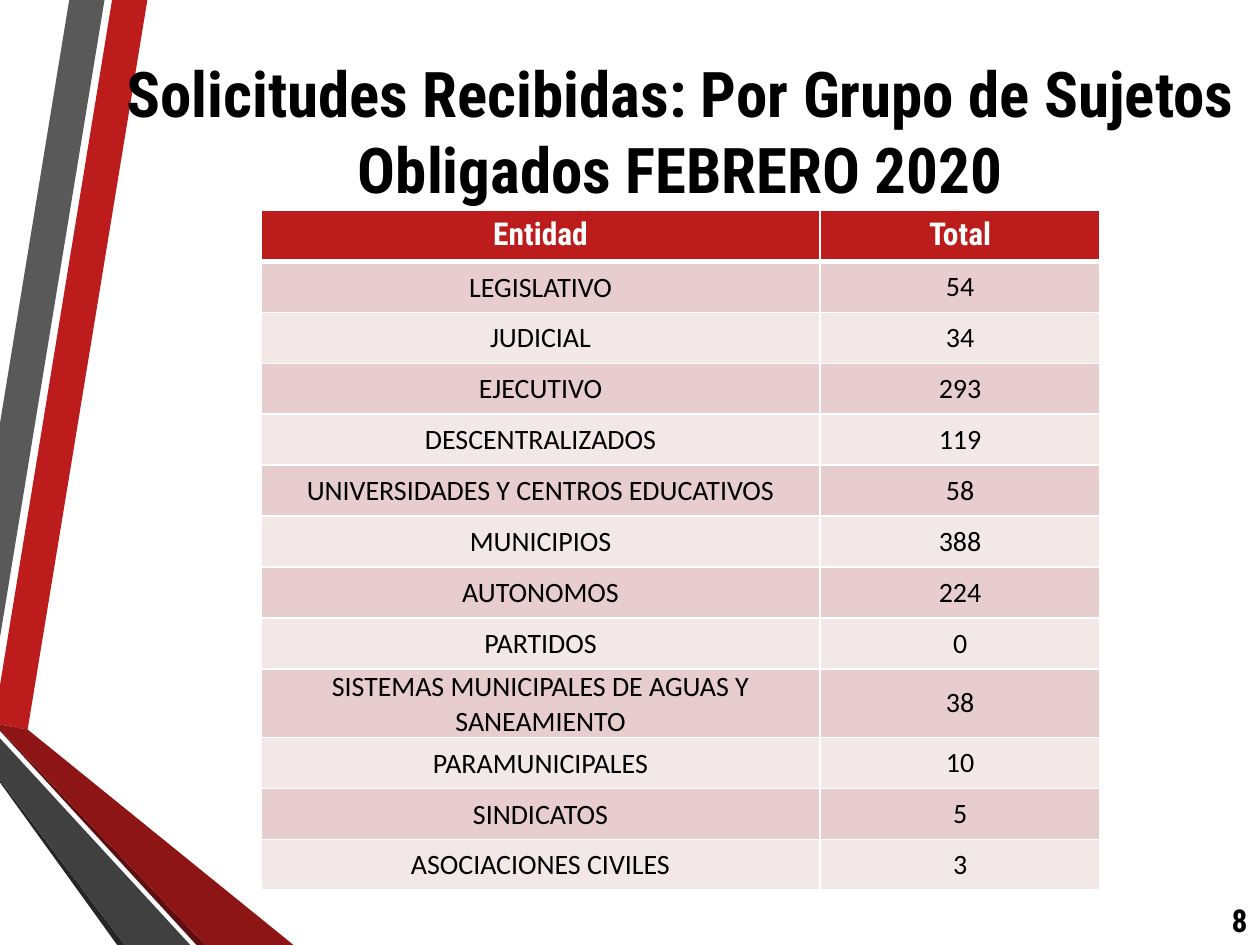
from lxml.etree import SubElement
from pptx import Presentation
from pptx.dml.color import RGBColor
from pptx.enum.text import MSO_ANCHOR as Anchor, MSO_AUTO_SIZE as AutoSize, PP_ALIGN as Align
from pptx.oxml.ns import qn
from pptx.util import Inches, Pt

HEADING_FONT = "Roboto Condensed"
BODY_FONT = "Calibri"
BLACK, WHITE, RED = "000000", "FFFFFF", "BC1C1C"
ROW_FILLS = ("E7CDCD", "F3E8E8")

BANDS = [
    (RED, [(0, 5.44), (0, 5.75), (0.22, 5.79), (1.17, 0), (0.89, 0)]),
    ("595959", [(0.83, 0), (0.55, 0), (0, 3.36), (0, 5.06)]),
    ("262626", [(0, 6.19), (0, 6.21), (0.93, 7.5), (0.99, 7.5)]),
    ("5E0E0E", [(0, 5.79), (0, 5.8), (1.56, 7.5), (1.63, 7.5)]),
    ("8D1515", [(0, 5.79), (1.63, 7.5), (2.33, 7.5), (0.22, 5.79), (0, 5.75)]),
    ("404040", [(0, 6.19), (0.99, 7.5), (1.51, 7.5), (0, 5.86)]),
]

REQUESTS = [
    ("LEGISLATIVO", 54),
    ("JUDICIAL", 34),
    ("EJECUTIVO", 293),
    ("DESCENTRALIZADOS", 119),
    ("UNIVERSIDADES Y CENTROS EDUCATIVOS", 58),
    ("MUNICIPIOS", 388),
    ("AUTONOMOS", 224),
    ("PARTIDOS", 0),
    ("SISTEMAS MUNICIPALES DE AGUAS Y SANEAMIENTO", 38),
    ("PARAMUNICIPALES", 10),
    ("SINDICATOS", 5),
    ("ASOCIACIONES CIVILES", 3),
]


def color(value):
    return RGBColor.from_string(value)


class SlideBuilder:
    def __init__(self, page):
        self.page = page

    def add_text(self, frame, lines, size, font=HEADING_FONT, ink=BLACK, bold=True, align=Align.CENTER):
        para = frame.paragraphs[0]
        para.alignment = align
        for index, line in enumerate(lines):
            if index:
                para.add_line_break()
            span = para.add_run()
            span.text = line
            span.font.name = font
            span.font.size = Pt(size)
            span.font.bold = bold
            span.font.color.rgb = color(ink)

    def band(self, fill, points):
        corners = [(Inches(x), Inches(y)) for x, y in points]
        builder = self.page.shapes.build_freeform(*corners[0])
        builder.add_line_segments(corners[1:], close=True)
        shape = builder.convert_to_shape()
        shape.shadow.inherit = False
        shape.fill.solid()
        shape.fill.fore_color.rgb = color(fill)
        shape.line.fill.background()

    def title(self, lines, left, top, width, height):
        box = self.page.shapes.title
        box.left, box.top = Inches(left), Inches(top)
        box.width, box.height = Inches(width), Inches(height)
        frame = box.text_frame
        frame.word_wrap = True
        frame.auto_size = AutoSize.NONE
        frame.vertical_anchor = Anchor.MIDDLE
        self.add_text(frame, lines, 36)
        self.page.shapes.element.append(box.element)

    def page_number(self, text, left, top, width, height):
        box = self.page.shapes.add_textbox(Inches(left), Inches(top), Inches(width), Inches(height))
        frame = box.text_frame
        frame.word_wrap = True
        frame.vertical_anchor = Anchor.MIDDLE
        self.add_text(frame, [text], 18, align=Align.RIGHT)

    def borders(self, cell, widths):
        properties = cell._tc.get_or_add_tcPr()
        for index, (side, width) in enumerate(zip("LRTB", widths)):
            line = properties.makeelement(qn(f"a:ln{side}"), {"w": str(Pt(width))})
            fill = SubElement(line, qn("a:solidFill"))
            SubElement(fill, qn("a:srgbClr"), val=WHITE)
            properties.insert(index, line)

    def cell(self, cell, text, fill, widths, **style):
        cell.fill.solid()
        cell.fill.fore_color.rgb = color(fill)
        self.borders(cell, widths)
        self.add_text(cell.text_frame, [text], **style)

    def table(self, headers, records, left, top, column_widths, height):
        count = len(records) + 1
        frame = self.page.shapes.add_table(
            count, len(headers), Inches(left), Inches(top), Inches(sum(column_widths)), Inches(height)
        )
        table = frame.table
        for column, width in zip(table.columns, column_widths):
            column.width = Inches(width)
        for row in table.rows:
            row.height = Inches(height / count)
        for column, header in enumerate(headers):
            self.cell(table.cell(0, column), header, RED, (1, 1, 1, 3), size=18, ink=WHITE)
        for index, record in enumerate(records):
            top_width = 1 if index else 3
            for column, value in enumerate(record):
                cell = table.cell(index + 1, column)
                cell.vertical_anchor = Anchor.MIDDLE
                if column == 0:
                    cell.margin_left = cell.margin_right = cell.margin_top = Inches(0.01)
                    cell.margin_bottom = 0
                self.cell(cell, str(value), ROW_FILLS[index % 2], (1, 1, top_width, 1),
                          size=16, font=BODY_FONT, bold=False)


def main():
    deck = Presentation()
    deck.slide_width, deck.slide_height = Inches(10), Inches(7.5)
    builder = SlideBuilder(deck.slides.add_slide(deck.slide_layouts[5]))
    for fill, points in BANDS:
        builder.band(fill, points)
    builder.page_number("8", 9.53, 7.1, 0.47, 0.4)
    builder.table(("Entidad", "Total"), REQUESTS, 2.07, 1.67, (4.44, 2.22), 5.26)
    builder.title(["Solicitudes Recibidas: Por Grupo de Sujetos", "Obligados FEBRERO 2020"], 0.65, 0.67, 9.5, 0.73)
    deck.save("out.pptx")


if __name__ == "__main__":
    main()
